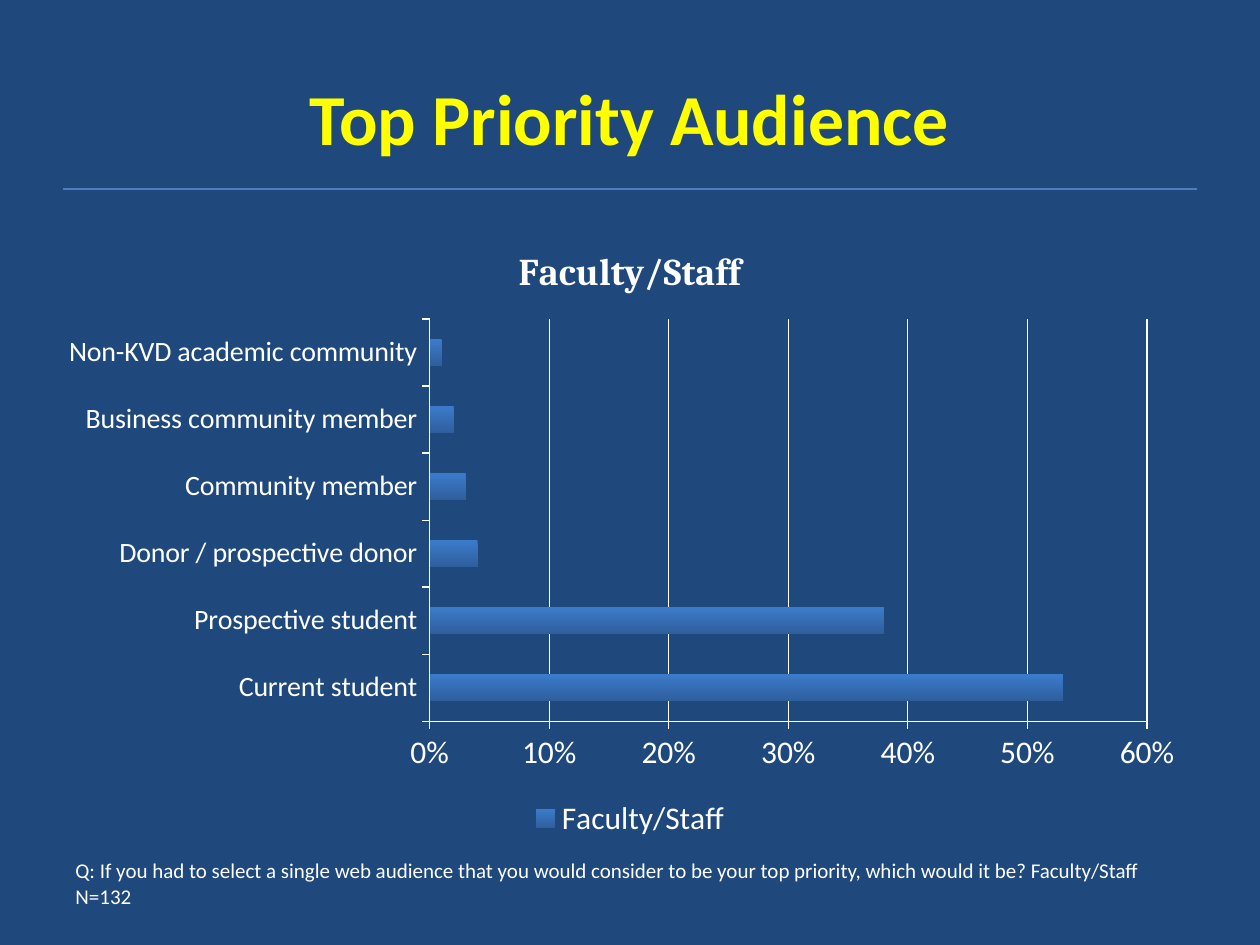
from lxml.etree import SubElement
from pptx import Presentation
from pptx.chart.data import CategoryChartData
from pptx.dml.color import RGBColor
from pptx.enum.chart import XL_CHART_TYPE, XL_LEGEND_POSITION, XL_TICK_MARK
from pptx.enum.shapes import MSO_CONNECTOR
from pptx.enum.text import MSO_ANCHOR, PP_ALIGN
from pptx.oxml.ns import qn
from pptx.util import Inches, Pt

NAVY = RGBColor(0x1F, 0x49, 0x7D)
YELLOW = RGBColor(0xFF, 0xFF, 0x00)
WHITE = RGBColor(0xFF, 0xFF, 0xFF)
RULE_BLUE = RGBColor(0x4B, 0x7E, 0xBC)
BAR_TOP = RGBColor(0x3C, 0x7B, 0xCB)
BAR_BOTTOM = RGBColor(0x2F, 0x5E, 0x9C)

BODY_FONT = "Calibri"
CHART_FONT = "Cambria"

AUDIENCE_SHARES = {
    "Current student": 0.53,
    "Prospective student": 0.38,
    "Donor / prospective donor": 0.04,
    "Community member": 0.03,
    "Business community member": 0.02,
    "Non-KVD academic community": 0.01,
}


class SlideBuilder:
    """Places elements on a grid of 20 columns by 15 rows (half-inch cells)."""

    COLUMNS, ROWS = 20, 15

    def __init__(self, presentation):
        self.cell_width = presentation.slide_width / self.COLUMNS
        self.cell_height = presentation.slide_height / self.ROWS
        self.slide = presentation.slides.add_slide(presentation.slide_layouts[6])
        background = self.slide.background.fill
        background.solid()
        background.fore_color.rgb = NAVY

    def place(self, column, row, columns, rows):
        return (int(column * self.cell_width), int(row * self.cell_height),
                int(columns * self.cell_width), int(rows * self.cell_height))

    def style(self, font, size, color=WHITE, name=BODY_FONT, bold=False):
        font.name, font.size, font.bold = name, Pt(size), bold
        font.color.rgb = color

    def text(self, words, cell, size, color=WHITE, bold=False,
             align=PP_ALIGN.LEFT, anchor=MSO_ANCHOR.TOP):
        frame = self.slide.shapes.add_textbox(*self.place(*cell)).text_frame
        frame.word_wrap = True
        frame.vertical_anchor = anchor
        frame.text = words
        paragraph = frame.paragraphs[0]
        paragraph.alignment = align
        self.style(paragraph.runs[0].font, size, color, bold=bold)

    def rule(self, column, row, columns):
        left, top, width, _ = self.place(column, row, columns, 0)
        line = self.slide.shapes.add_connector(
            MSO_CONNECTOR.STRAIGHT, left, top, left + width, top)
        line.line.color.rgb = RULE_BLUE
        line.line.width = Pt(0.75)
        SubElement(line._element.spPr, qn("a:effectLst"))

    def bar_chart(self, name, shares, cell):
        data = CategoryChartData(number_format="0%")
        data.categories = list(shares)
        data.add_series(name, list(shares.values()))
        chart = self.slide.shapes.add_chart(
            XL_CHART_TYPE.BAR_CLUSTERED, *self.place(*cell), data).chart
        self.style(chart.font, 18, name=CHART_FONT)

        # Title and legend
        chart.has_title = True
        title = chart.chart_title.text_frame
        title.text = name
        self.style(title.paragraphs[0].runs[0].font, 21.6,
                   name=CHART_FONT, bold=True)
        chart.has_legend = True
        chart.legend.position = XL_LEGEND_POSITION.BOTTOM
        chart.legend.include_in_layout = False
        self.style(chart.legend.font, 18)

        # Axes
        for axis, size in ((chart.category_axis, 16), (chart.value_axis, 18)):
            axis.major_tick_mark = XL_TICK_MARK.OUTSIDE
            axis.format.line.color.rgb = WHITE
            self.style(axis.tick_labels.font, size)
        values = chart.value_axis
        values.minimum_scale, values.maximum_scale = 0, 0.6
        values.major_unit = 0.1
        values.tick_labels.number_format = "0%"
        values.tick_labels.number_format_is_linked = False
        values.has_major_gridlines = True
        values.major_gridlines.format.line.color.rgb = WHITE
        values.major_gridlines.format.line.width = Pt(0.75)

        # Bars
        plot = chart.plots[0]
        plot.gap_width = 150
        plot.vary_by_categories = False
        fill = plot.series[0].format.fill
        fill.gradient()
        fill.gradient_angle = 270
        for stop, color in zip(fill.gradient_stops, (BAR_TOP, BAR_BOTTOM)):
            stop.color.rgb = color


def main():
    presentation = Presentation()
    presentation.slide_width, presentation.slide_height = Inches(10), Inches(7.5)
    builder = SlideBuilder(presentation)

    # Heading
    builder.text("Top Priority Audience", (1, 0.6, 18, 2.5), 41, YELLOW,
                 bold=True, align=PP_ALIGN.CENTER, anchor=MSO_ANCHOR.MIDDLE)

    # Survey results
    builder.bar_chart("Faculty/Staff", AUDIENCE_SHARES, (1, 3.5, 18, 9.9))

    # Survey question
    builder.text("Q: If you had to select a single web audience that you would "
                 "consider to be your top priority, which would it be? "
                 "Faculty/Staff N=132", (1, 13.52, 17.78, 1), 12)

    # Rule below the heading
    builder.rule(1, 3, 18)

    presentation.save("out.pptx")


if __name__ == "__main__":
    main()
